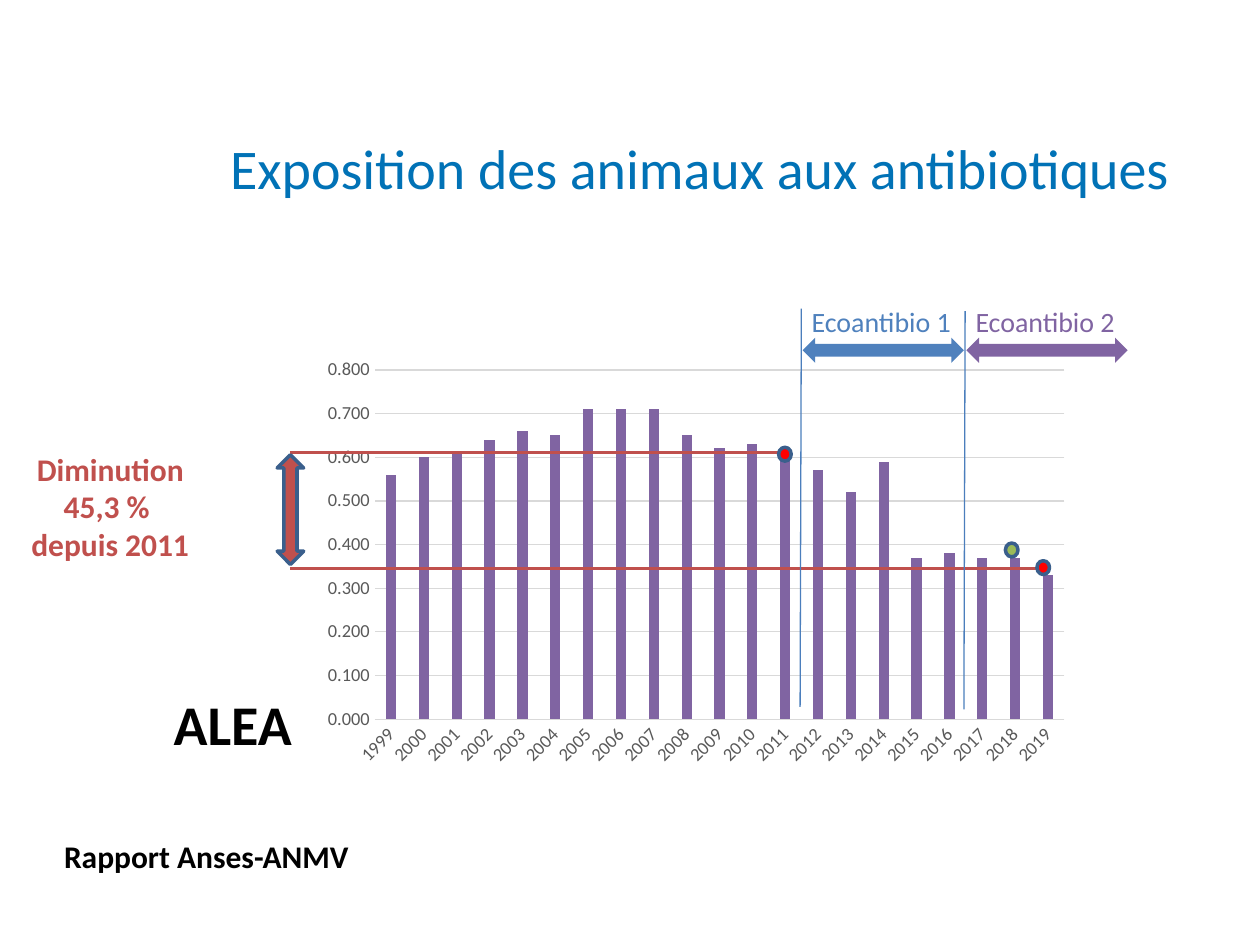
from dataclasses import dataclass

import pptx
import pptx.chart.data
import pptx.dml.color
import pptx.enum.chart
import pptx.enum.shapes
import pptx.enum.text
import pptx.oxml
import pptx.oxml.ns
import pptx.util

Inches, Pt = pptx.util.Inches, pptx.util.Pt
SHAPE = pptx.enum.shapes.MSO_SHAPE
ALIGN = pptx.enum.text.PP_ALIGN
FONT = "Calibri"
RED, BLUE, PURPLE, OUTLINE = "C0504D", "4F81BD", "8064A2", "3A5F8C"
GRAY, GRID, BLACK = "595959", "D9D9D9", "000000"


@dataclass
class Label:
    text: str
    box: tuple
    size: float
    color: str
    bold: bool = False
    align: ALIGN = ALIGN.LEFT


@dataclass
class Mark:
    kind: SHAPE
    box: tuple
    fill: str
    outlined: bool = True


@dataclass
class Rule:
    start: tuple
    end: tuple
    color: str
    width: float


def rgb(color: str) -> pptx.dml.color.RGBColor:
    return pptx.dml.color.RGBColor.from_string(color)


def style_font(font, size: float, color: str, bold: bool = False) -> None:
    font.name, font.size, font.bold = FONT, Pt(size), bold
    font.color.rgb = rgb(color)


def write(tf, label: Label) -> None:
    tf.word_wrap = True
    tf.text = label.text
    for p in tf.paragraphs:
        p.alignment = label.align
        for r in p.runs:
            style_font(r.font, label.size, label.color, label.bold)


def add_label(s, label: Label) -> None:
    sp = s.shapes.add_textbox(*map(Inches, label.box))
    write(sp.text_frame, label)


def add_mark(s, mark: Mark) -> None:
    sp = s.shapes.add_shape(mark.kind, *map(Inches, mark.box))
    sp.shadow.inherit = False
    sp.fill.solid()
    sp.fill.fore_color.rgb = rgb(mark.fill)
    if mark.outlined:
        sp.line.color.rgb = rgb(OUTLINE)
        sp.line.width = Pt(2)
    else:
        sp.line.fill.background()


def add_rule(s, rule: Rule) -> None:
    cx = s.shapes.add_connector(pptx.enum.shapes.MSO_CONNECTOR.STRAIGHT,
                                *map(Inches, rule.start + rule.end))
    cx.line.color.rgb = rgb(rule.color)
    cx.line.width = Pt(rule.width)
    sp_pr = cx._element.spPr
    sp_pr.append(pptx.oxml.parse_xml(
        f"<a:effectLst {pptx.oxml.ns.nsdecls('a')}/>"))


def add_exposure_chart(s) -> None:
    data = pptx.chart.data.CategoryChartData()
    data.categories = [str(year) for year in range(1999, 2020)]
    data.add_series("Series 1", (
        0.56, 0.6, 0.61, 0.64, 0.66, 0.65, 0.71, 0.71, 0.71, 0.65, 0.62,
        0.63, 0.6, 0.57, 0.52, 0.59, 0.37, 0.38, 0.37, 0.37, 0.33))
    chart = s.shapes.add_chart(
        pptx.enum.chart.XL_CHART_TYPE.COLUMN_CLUSTERED,
        *map(Inches, (2.48, 2.78, 6.09, 3.37)), data).chart
    style_font(chart.font, 10, BLACK)
    chart.has_legend = False
    chart.has_title = False

    plot = chart.plots[0]
    plot.gap_width, plot.overlap, plot.vary_by_categories = 219, -27, False
    fill = plot.series[0].format.fill
    fill.solid()
    fill.fore_color.rgb = rgb(PURPLE)

    years, values = chart.category_axis, chart.value_axis
    for axis in (years, values):
        axis.major_tick_mark = pptx.enum.chart.XL_TICK_MARK.NONE
        style_font(axis.tick_labels.font, 10.5, GRAY)
    values.minimum_scale, values.maximum_scale, values.major_unit = 0, 0.8, 0.1
    values.tick_labels.number_format = "#,##0.000"
    values.tick_labels.number_format_is_linked = False
    values.format.line.fill.background()
    for line in (years.format.line, values.major_gridlines.format.line):
        line.color.rgb = rgb(GRID)
        line.width = Pt(0.75)
    # Slanted year labels
    body = years._element.find(".//" + pptx.oxml.ns.qn("a:bodyPr"))
    body.set("rot", "-2700000")
    body.set("vert", "horz")


def main() -> None:
    prs = pptx.Presentation()
    prs.slide_width, prs.slide_height = Inches(10), Inches(7.5)
    s = prs.slides.add_slide(prs.slide_layouts[5])

    # Title
    title = s.shapes.title
    title.left, title.top, title.width, title.height = map(
        Inches, (1.34, 1.15, 8.43, 0.35))
    write(title.text_frame, Label("Exposition des animaux aux antibiotiques",
                                  (), 32, "0172B6", align=ALIGN.CENTER))
    title.text_frame.vertical_anchor = pptx.enum.text.MSO_ANCHOR.MIDDLE

    add_label(s, Label("ALEA", (1.28, 5.42, 1.16, 0.64), 32, BLACK, True))
    add_exposure_chart(s)

    # Decrease between the 2011 and 2019 levels
    add_label(s, Label("Diminution\n45,3 % \ndepuis 2011",
                       (0, 3.52, 1.75, 1.04), 18, RED, True, ALIGN.CENTER))
    for y, right in ((3.59, 6.2), (4.51, 8.23)):
        add_rule(s, Rule((2.3, y), (right, y), RED, 1.5))
    add_mark(s, Mark(SHAPE.UP_DOWN_ARROW, (2.2, 3.61, 0.21, 0.87), RED))
    for x, y, color in ((6.18, 3.55, "FF0000"), (8.23, 4.45, "FF0000"),
                        (7.98, 4.31, "9BBB59")):
        add_mark(s, Mark(SHAPE.OVAL, (x, y, 0.1, 0.11), color))

    # Plan periods: start line, arrow and name
    for number, x, top, color in ((1, 6.35, 2.45, BLUE),
                                  (2, 7.65, 2.47, PURPLE)):
        add_mark(s, Mark(SHAPE.LEFT_RIGHT_ARROW, (x + 0.02, 2.68, 1.28, 0.2),
                         color, outlined=False))
        add_label(s, Label(f"Ecoantibio {number}", (x - 0.12, 2.37, 1.53, 0.37),
                           16, color, align=ALIGN.CENTER))
        add_rule(s, Rule((x, top + 3.16), (x + 0.01, top), "4B7EBC", 0.75))

    # Source
    add_label(s, Label("Rapport Anses-ANMV", (0.41, 6.59, 2.68, 0.4),
                       18, BLACK, True))
    prs.save("out.pptx")


if __name__ == "__main__":
    main()
